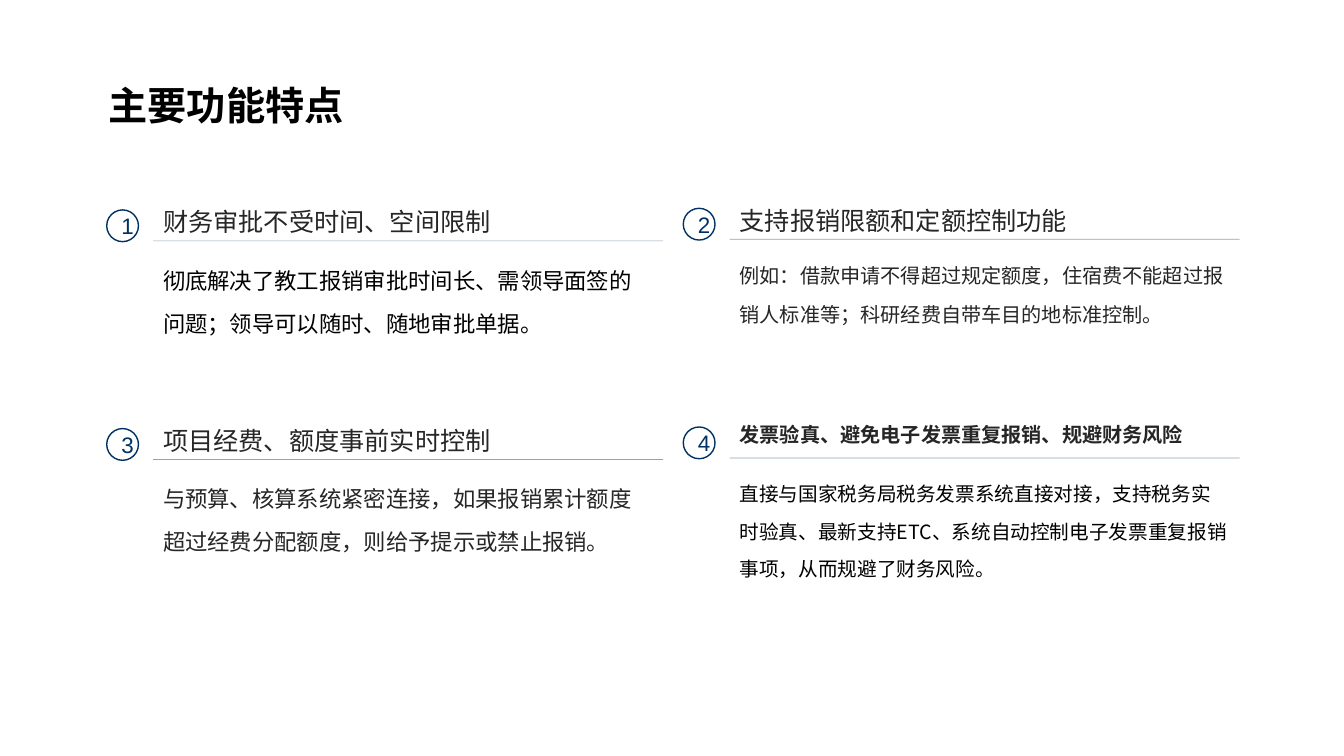
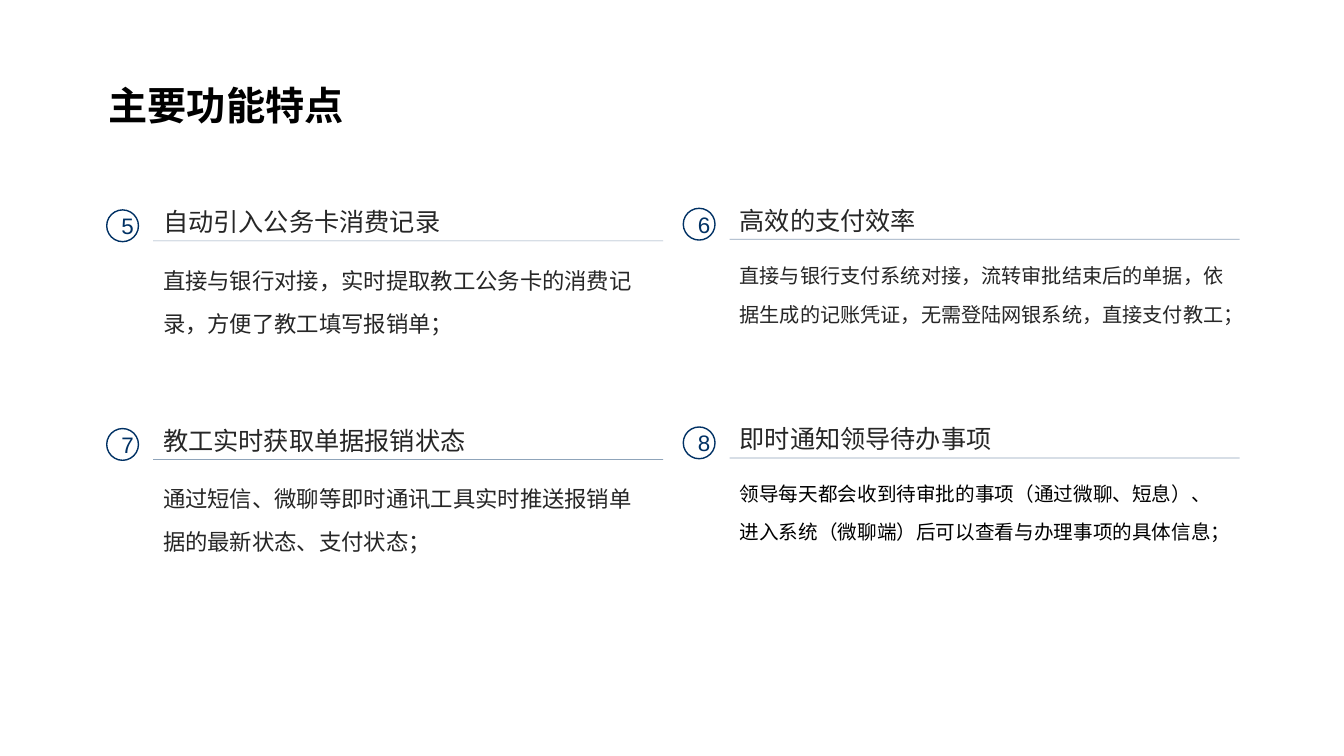
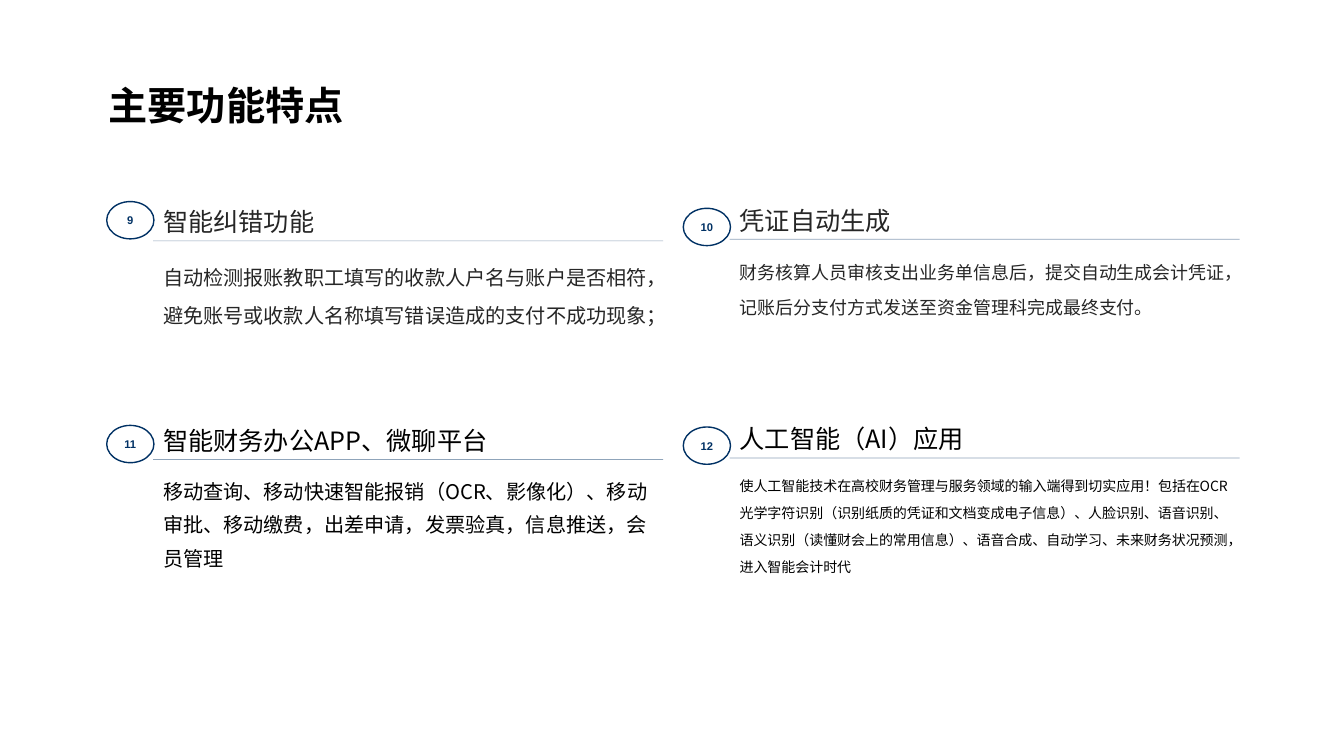
"""Build three slides that present the main features of a reimbursement system."""
from dataclasses import dataclass

from lxml.etree import SubElement
from pptx import Presentation
from pptx.dml.color import RGBColor
from pptx.enum.shapes import MSO_CONNECTOR as Connector, MSO_SHAPE as Preset
from pptx.enum.text import MSO_ANCHOR as Anchor, PP_ALIGN as Align
from pptx.oxml.ns import qn
from pptx.slide import Slide
from pptx.text.text import TextFrame
from pptx.util import Cm, Pt

CJK, LATIN = "Noto Sans CJK SC", "Arial"
NAVY, DARK, BLACK = "003164", "262626", "000000"
TITLE = "主要功能特点"
COLUMN_LEFTS = (3.86, 18.39)
COLUMN_SHIFTS = (0, -0.04)
RULE_TOPS = (6.07, 11.58)
COLUMN_WIDTH = 12.85
BADGE_INDENT = 1.17
TITLE_LEADING, HEADING_LEADING, BODY_LEADING = 1.5, 1.4, 1.92


@dataclass(frozen=True)
class TextStyle:
    size: float
    color: str = DARK
    font: str = CJK
    bold: bool = False
    leading: float = 0


@dataclass(frozen=True)
class Badge:
    width: float
    height: float
    style: TextStyle
    rise: float = 0.78


def heading_style(size: float = 18, color: str = DARK, bold: bool = False) -> TextStyle:
    return TextStyle(size, color, CJK, bold, HEADING_LEADING)


def body_style(size: float, color: str = DARK, leading: float = BODY_LEADING) -> TextStyle:
    return TextStyle(size, color, LATIN if color == DARK else CJK, False, leading)


def wide_badge(rise: float = 0.78) -> Badge:
    return Badge(1.19, 0.94, TextStyle(8, NAVY, LATIN, True), rise)


TITLE_STYLE = TextStyle(28, BLACK, CJK, True, TITLE_LEADING)
ROUND_BADGE = Badge(0.8, 0.8, TextStyle(16, NAVY, LATIN))
HEADING = heading_style()


@dataclass(frozen=True)
class Feature:
    heading: str
    body: str
    body_style: TextStyle
    heading_style: TextStyle = HEADING
    badge: Badge = ROUND_BADGE


SLIDES = (
    (
        Feature("财务审批不受时间、空间限制",
                "彻底解决了教工报销审批时间长、需领导面签的问题；领导可以随时、随地审批单据。",
                body_style(16, BLACK)),
        Feature("支持报销限额和定额控制功能",
                "例如：借款申请不得超过规定额度，住宿费不能超过报销人标准等；"
                "科研经费自带车目的地标准控制。",
                body_style(14.4)),
        Feature("项目经费、额度事前实时控制",
                "与预算、核算系统紧密连接，如果报销累计额度超过经费分配额度，"
                "则给予提示或禁止报销。",
                body_style(16)),
        Feature("发票验真、避免电子发票重复报销、规避财务风险",
                "直接与国家税务局税务发票系统直接对接，支持税务实时验真、最新支持ETC、"
                "系统自动控制电子发票重复报销事项，从而规避了财务风险。",
                body_style(14, BLACK), heading_style(14.4, bold=True)),
    ),
    (
        Feature("自动引入公务卡消费记录",
                "直接与银行对接，实时提取教工公务卡的消费记录，方便了教工填写报销单；",
                body_style(16)),
        Feature("高效的支付效率",
                "直接与银行支付系统对接，流转审批结束后的单据，"
                "依据生成的记账凭证，无需登陆网银系统，直接支付教工；",
                body_style(14.4)),
        Feature("教工实时获取单据报销状态",
                "通过短信、微聊等即时通讯工具实时推送报销单据的最新状态、支付状态；",
                body_style(16)),
        Feature("即时通知领导待办事项",
                "领导每天都会收到待审批的事项（通过微聊、短息）、"
                "进入系统（微聊端）后可以查看与办理事项的具体信息；",
                body_style(14, BLACK)),
    ),
    (
        Feature("智能纠错功能",
                "自动检测报账教职工填写的收款人户名与账户是否相符，"
                "避免账号或收款人名称填写错误造成的支付不成功现象；",
                body_style(14.4), badge=wide_badge(0.99)),
        Feature("凭证自动生成",
                "财务核算人员审核支出业务单信息后，提交自动生成会计凭证，"
                "记账后分支付方式发送至资金管理科完成最终支付。",
                body_style(12.8), badge=wide_badge()),
        Feature("智能财务办公APP、微聊平台",
                "移动查询、移动快速智能报销（OCR、影像化）、移动审批、移动缴费，"
                "出差申请，发票验真，信息推送，会员管理",
                body_style(14.4, BLACK, 1.68), heading_style(color=BLACK), wide_badge(0.86)),
        Feature("人工智能（AI）应用",
                "使人工智能技术在高校财务管理与服务领域的输入端得到切实应用！"
                "包括在OCR光学字符识别（识别纸质的凭证和文档变成电子信息）、人脸识别、"
                "语音识别、语义识别（读懂财会上的常用信息）、语音合成、自动学习、"
                "未来财务状况预测，进入智能会计时代",
                body_style(10, BLACK), heading_style(color=BLACK), wide_badge()),
    ),
)


def rgb(color: str) -> RGBColor:
    return RGBColor.from_string(color)


def write_text(frame: TextFrame, text: str, style: TextStyle) -> None:
    frame.text = text
    paragraph = frame.paragraphs[0]
    if style.leading:
        paragraph.line_spacing = Pt(round(style.size * style.leading, 1))
    for run in paragraph.runs:
        run.font.size = Pt(style.size)
        run.font.bold = style.bold
        run.font.color.rgb = rgb(style.color)
        run.font.name = style.font
        SubElement(run.font._element, qn("a:ea"), typeface=CJK)


def add_text(slide: Slide, left: float, top: float, width: float, height: float,
             text: str, style: TextStyle) -> None:
    box = slide.shapes.add_textbox(Cm(left), Cm(top), Cm(width), Cm(height))
    box.text_frame.word_wrap = True
    write_text(box.text_frame, text, style)


def add_rule(slide: Slide, left: float, top: float) -> None:
    rule = slide.shapes.add_connector(
        Connector.STRAIGHT, Cm(left), Cm(top), Cm(left + COLUMN_WIDTH), Cm(top))
    rule.line.width = Pt(0.5)
    rule.line.color.rgb = rgb(NAVY)
    properties = rule._element.spPr
    color = properties.find(".//" + qn("a:srgbClr"))
    SubElement(color, qn("a:alpha"), val="44000")
    SubElement(properties, qn("a:effectLst"))


def add_badge(slide: Slide, left: float, top: float, number: int, badge: Badge) -> None:
    shape = slide.shapes.add_shape(
        Preset.OVAL, Cm(left), Cm(top), Cm(badge.width), Cm(badge.height))
    shape.shadow.inherit = False
    shape.fill.background()
    shape.line.color.rgb = rgb(NAVY)
    shape.line.width = Pt(1)
    shape.text_frame.vertical_anchor = Anchor.MIDDLE
    write_text(shape.text_frame, str(number), badge.style)
    shape.text_frame.paragraphs[0].alignment = Align.CENTER


def add_feature(slide: Slide, position: int, number: int, feature: Feature) -> None:
    row, column = divmod(position, len(COLUMN_LEFTS))
    left = COLUMN_LEFTS[column]
    top = RULE_TOPS[row] + COLUMN_SHIFTS[column]
    add_rule(slide, left, top)
    add_text(slide, left, top - 1.12, COLUMN_WIDTH, 1.14,
             feature.heading, feature.heading_style)
    add_text(slide, left, top + 0.12, COLUMN_WIDTH, 2.88, feature.body, feature.body_style)
    add_badge(slide, left - BADGE_INDENT, top - feature.badge.rise, number, feature.badge)


def main() -> None:
    presentation = Presentation()
    presentation.slide_width, presentation.slide_height = Cm(33.87), Cm(19.05)
    number = 0
    for features in SLIDES:
        slide = presentation.slides.add_slide(presentation.slide_layouts[6])
        add_text(slide, 2.49, 1.63, 28.98, 2.21, TITLE, TITLE_STYLE)
        for position, feature in enumerate(features):
            number += 1
            add_feature(slide, position, number, feature)
    presentation.save("out.pptx")


if __name__ == "__main__":
    main()
